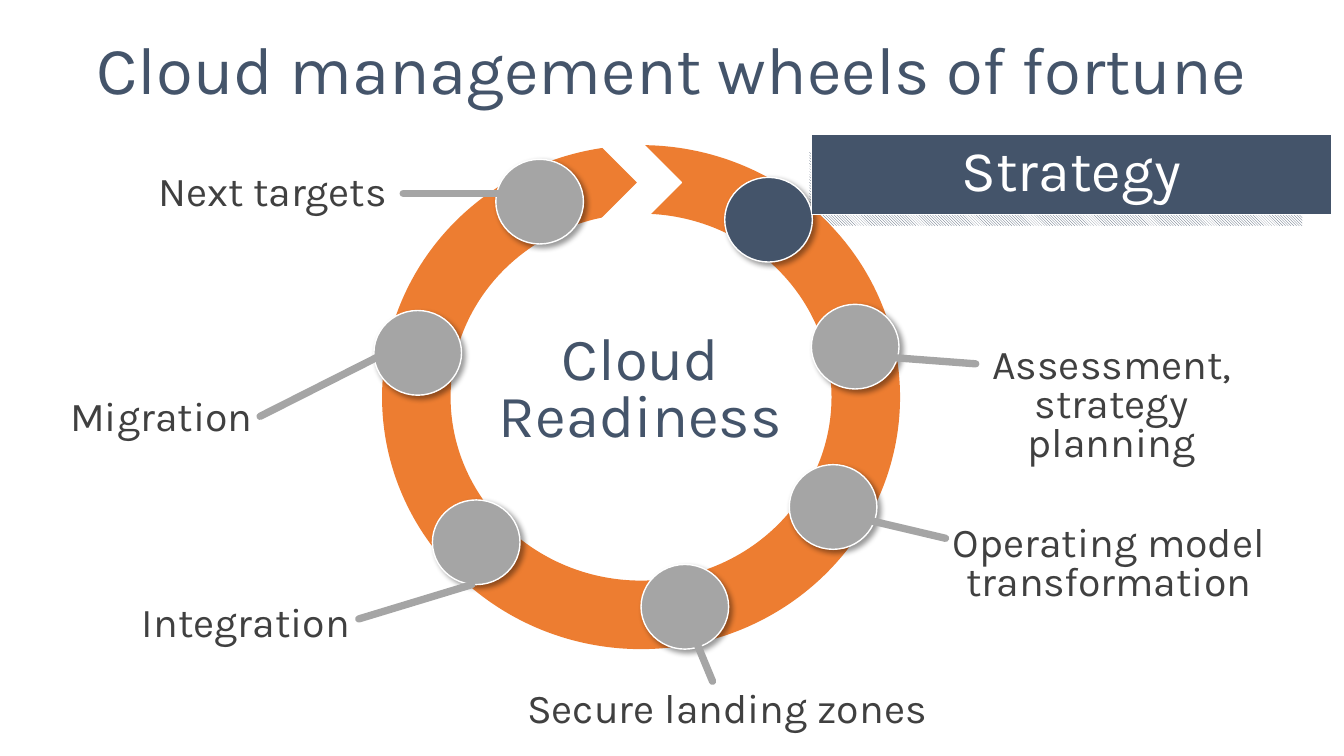
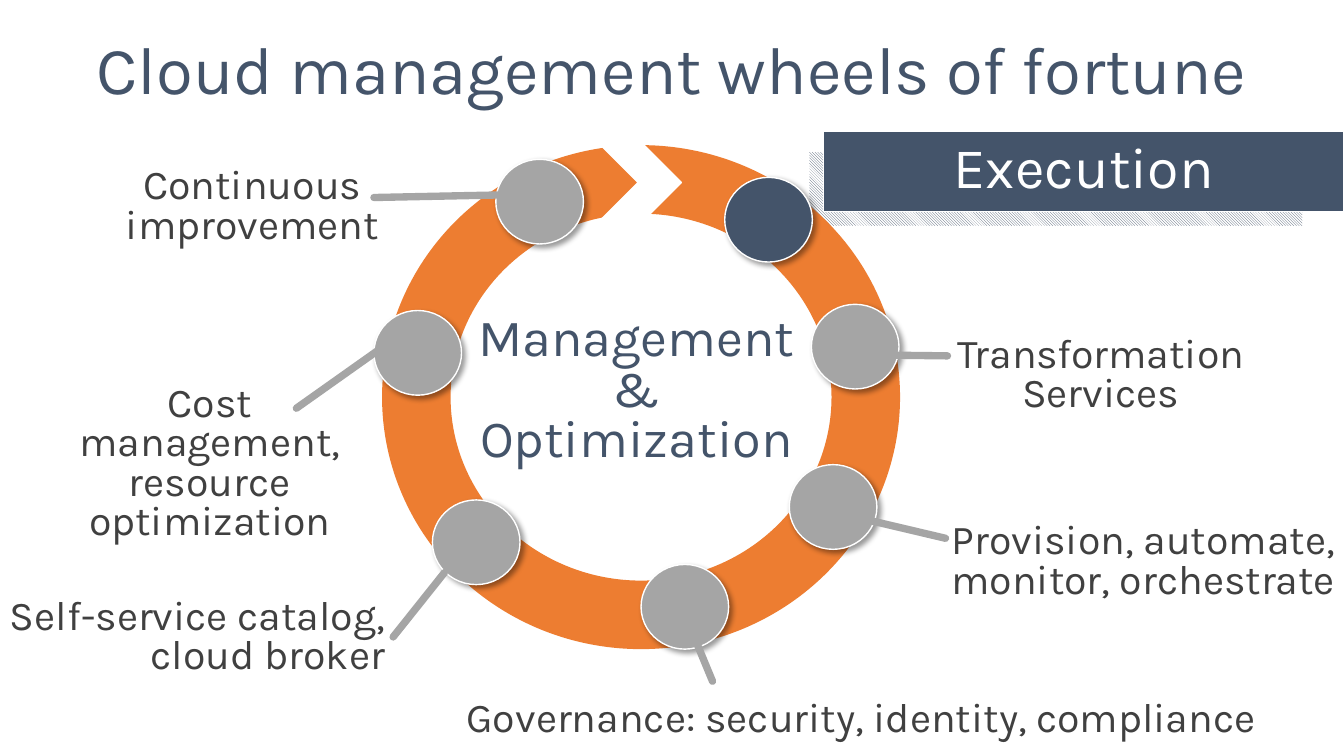
from lxml import etree
from pptx import Presentation
from pptx.dml.color import RGBColor
from pptx.enum.dml import MSO_PATTERN
from pptx.enum.shapes import MSO_CONNECTOR, MSO_SHAPE
from pptx.enum.text import MSO_ANCHOR, MSO_AUTO_SIZE, PP_ALIGN
from pptx.oxml.ns import qn
from pptx.util import Pt

LEFT, CENTER, RIGHT = PP_ALIGN.LEFT, PP_ALIGN.CENTER, PP_ALIGN.RIGHT
TOP, MIDDLE = MSO_ANCHOR.TOP, MSO_ANCHOR.MIDDLE
DONUT, CHEVRON = MSO_SHAPE.DONUT, MSO_SHAPE.CHEVRON
OVAL, RECTANGLE = MSO_SHAPE.OVAL, MSO_SHAPE.RECTANGLE
HATCHING = MSO_PATTERN.LIGHT_DOWNWARD_DIAGONAL
STRAIGHT = MSO_CONNECTOR.STRAIGHT
NO_AUTOFIT = MSO_AUTO_SIZE.NONE
TITLE_ONLY = 5

# Shared style
FONT = "Karla"
NAVY, ORANGE, GRAY, DARK, WHITE = "44546A", "ED7D31", "A5A5A5", "404040", "FFFFFF"
TITLE = "Cloud management wheels of fortune"
TITLE_BOX = (0, 22.3, 960, 59)
HATCH_BOX = (578.2, 108.7, 352, 52.6)
RING_BOX = (272.9, 103.7, 370, 360)
GAP_BOX = (428.4, 103, 58.3, 54.7)
STOP_SIZE = (62.6, 60.5)
STOPS = [(517.7, 126.7), (579.6, 217.4), (563.8, 331.9), (457.9, 403.2),
         (308.9, 357.1), (267.1, 221.8), (354.2, 113.8)]
BANNER_SIZE = (371.5, 57.6)
HUB_TOP, HUB_WIDTH, HUB_HEIGHT = 222, 252.7, 116

# Leaders that both wheels use: from the stop to the label
MODEL_LEADER = (599, 366.5, 675.4, 384.5)
BOTTOM_LEADER = (493.2, 448.6, 509, 486.7)

# Each callout: lines of text, alignment, label box, leader
WHEELS = [
    {
        "banner": "Strategy", "banner_at": (579.6, 95.8),
        "hub": ["Cloud", "Readiness"], "hub_size": 42.7, "hub_left": 331.2,
        "callouts": [
            (["Next targets"], CENTER, (41, 121.7, 307.4, 36), (409, 138.2, 288, 138.2)),
            (["Integration"], RIGHT, (-5.8, 429.1, 262.8, 36), (337, 417.6, 256.3, 442.1)),
            (["Assessment, strategy planning"], CENTER, (673.9, 244.8, 240.5, 64),
             (610.6, 253.4, 697, 259.9)),
            (["Secure landing zones"], LEFT, (369.4, 491, 366.5, 36), BOTTOM_LEADER),
            (["Migration"], CENTER, (-2.9, 282.2, 236.2, 64), (280.1, 249.8, 185.8, 297.4)),
            (["Operating model transformation"], CENTER, (641.5, 372.2, 301, 93),
             MODEL_LEADER),
        ],
    },
    {
        "banner": "Execution", "banner_at": (588.5, 93.6),
        "hub": ["Management & Optimization"], "hub_size": 37.3, "hub_left": 328.3,
        "callouts": [
            (["Continuous improvement"], CENTER, (26.6, 116.6, 307.4, 64),
             (409, 138.2, 267.1, 141.1)),
            (["Self-service catalog, cloud broker"], RIGHT, (-2, 424.1, 284, 64),
             (317.5, 409, 280.8, 455)),
            (["Transformation", "Services"], CENTER, (666, 236.9, 240.5, 93),
             (610.6, 253.4, 676.8, 254.2)),
            (["Governance: security, identity, compliance"], LEFT,
             (326.2, 497.5, 598.3, 36), BOTTOM_LEADER),
            (["Cost management, resource optimization"], CENTER,
             (31.7, 272.2, 236.2, 150), (275.8, 246.2, 211.7, 291.6)),
            (["Provision, automate, monitor, orchestrate"], CENTER,
             (666, 370.1, 301, 93), MODEL_LEADER),
        ],
    },
]


def color(value):
    return RGBColor.from_string(value)


def points(values):
    return [Pt(value) for value in values]


def write(frame, lines, size, ink, alignment=CENTER, spacing=None, anchor=TOP):
    frame.word_wrap = True
    frame.vertical_anchor = anchor
    for index, line in enumerate(lines):
        paragraph = frame.add_paragraph() if index else frame.paragraphs[0]
        paragraph.alignment = alignment
        paragraph.line_spacing = spacing
        run = paragraph.add_run()
        run.text = line
        run.font.name = FONT
        run.font.size = Pt(size)
        run.font.color.rgb = color(ink)


def add_text(slide, box, *args, **options):
    frame = slide.shapes.add_textbox(*points(box)).text_frame
    frame.auto_size = NO_AUTOFIT
    write(frame, *args, spacing=0.8, **options)


def add_shape(slide, kind, box, fill, outline=None):
    shape = slide.shapes.add_shape(kind, *points(box))
    shape.shadow.inherit = False
    shape.fill.solid()
    shape.fill.fore_color.rgb = color(fill)
    if outline:
        shape.line.color.rgb = color(outline)
        shape.line.width = Pt(1)
    else:
        shape.line.fill.background()
    return shape


def add_drop_shadow(shape):
    effects = shape.element.spPr.find(qn("a:effectLst"))
    shadow = etree.SubElement(effects, qn("a:outerShdw"), blurRad=str(Pt(4)),
                              dist=str(Pt(3)), dir=str(45 * 60000),
                              algn="tl", rotWithShape="0")
    tint = etree.SubElement(shadow, qn("a:srgbClr"), val="000000")
    etree.SubElement(tint, qn("a:alpha"), val="40000")


def add_leader(slide, ends):
    leader = slide.shapes.add_connector(STRAIGHT, *points(ends))
    leader.line.color.rgb = color(GRAY)
    leader.line.width = Pt(5.25)
    properties = leader.element.spPr
    properties.find(qn("a:ln")).set("cap", "rnd")
    etree.SubElement(properties, qn("a:effectLst"))


def add_title(slide):
    title = slide.shapes.title
    title.left, title.top, title.width, title.height = points(TITLE_BOX)
    title.text_frame.auto_size = NO_AUTOFIT
    write(title.text_frame, [TITLE], 48, NAVY, spacing=0.9, anchor=MIDDLE)


def add_wheel(slide):
    hatch = add_shape(slide, RECTANGLE, HATCH_BOX, WHITE)
    hatch.fill.patterned()
    hatch.fill.pattern = HATCHING
    hatch.fill.fore_color.rgb = color(NAVY)
    hatch.fill.back_color.rgb = color(WHITE)
    ring = add_shape(slide, DONUT, RING_BOX, ORANGE)
    ring.adjustments[0] = 0.136
    add_shape(slide, CHEVRON, GAP_BOX, WHITE, WHITE)
    for index, position in enumerate(STOPS):
        stop = add_shape(slide, OVAL, position + STOP_SIZE, GRAY if index else NAVY, WHITE)
        add_drop_shadow(stop)


def add_banner(slide, text, position):
    table = slide.shapes.add_table(1, 1, *points(position + BANNER_SIZE)).table
    table.first_row = table.horz_banding = False
    cell = table.cell(0, 0)
    cell.fill.solid()
    cell.fill.fore_color.rgb = color(NAVY)
    write(cell.text_frame, [text], 41, WHITE)


def build_slide(presentation, wheel):
    slide = presentation.slides.add_slide(presentation.slide_layouts[TITLE_ONLY])
    add_title(slide)
    add_wheel(slide)
    for lines, alignment, box, ends in wheel["callouts"]:
        add_text(slide, box, lines, 29.3, DARK, alignment)
        add_leader(slide, ends)
    hub_box = (wheel["hub_left"], HUB_TOP, HUB_WIDTH, HUB_HEIGHT)
    add_text(slide, hub_box, wheel["hub"], wheel["hub_size"], NAVY, anchor=MIDDLE)
    add_banner(slide, wheel["banner"], wheel["banner_at"])


def main():
    presentation = Presentation()
    presentation.slide_width, presentation.slide_height = Pt(960), Pt(540)
    for wheel in WHEELS:
        build_slide(presentation, wheel)
    presentation.save("out.pptx")


if __name__ == "__main__":
    main()
